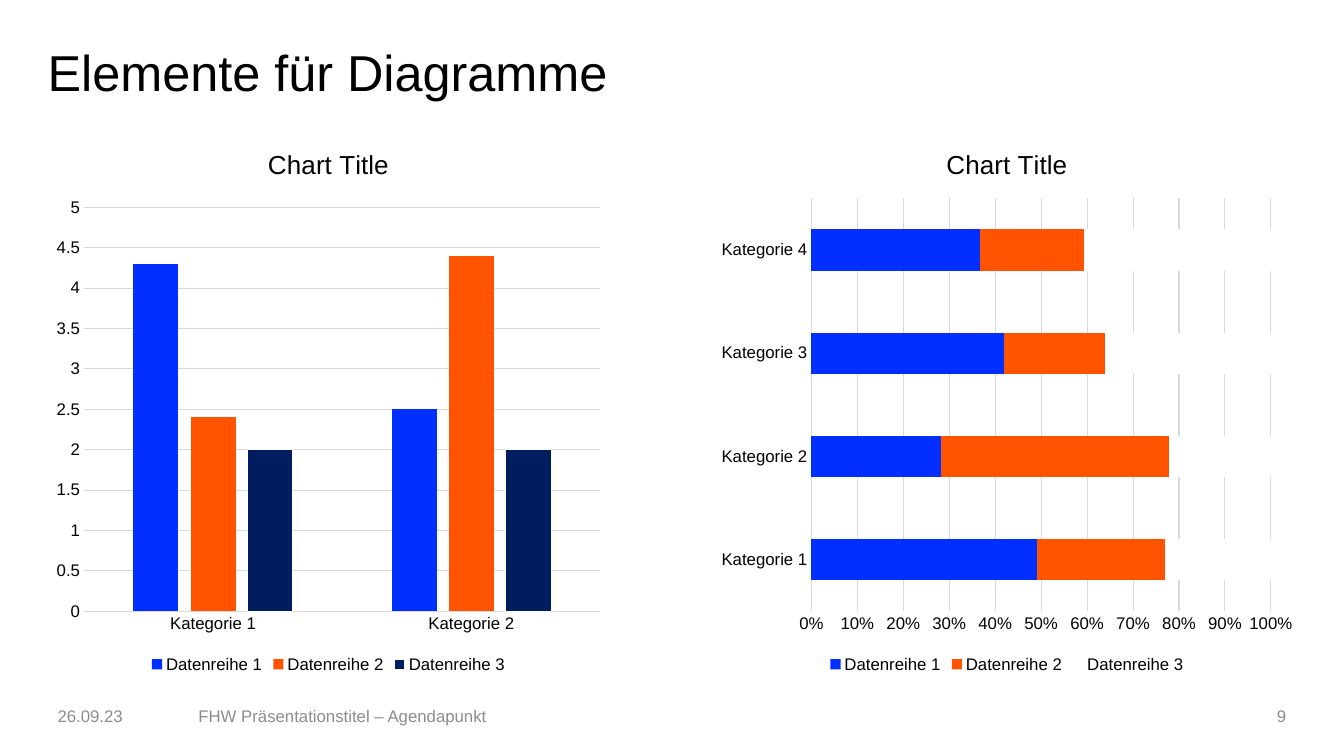
from pptx import Presentation
from pptx import util as u
from pptx.chart import data as chart_data
from pptx.dml import color
from pptx.enum import chart as kinds, text as text_kinds

FONT = "Arial"
COLORS = {
    "text": "000000",
    "footer": "8C8C8C",
    "grid": "D9D9D9",
    "blue": "002FFF",
    "orange": "FF5300",
    "navy": "001D60",
    "white": "FFFFFF",
}


def rgb(name):
    return color.RGBColor.from_string(COLORS[name])


def style_font(font, size, color_name="text"):
    font.name = FONT
    font.size = u.Pt(size)
    font.bold = False
    font.color.rgb = rgb(color_name)


def style_line(line, color_name):
    line.color.rgb = rgb(color_name)
    line.width = u.Pt(0.75)


def add_text(slide, content, box, *, size=12, color_name="text", right=False,
             inset=None, line_spacing=None):
    shape = slide.shapes.add_textbox(*map(u.Pt, box))
    frame = shape.text_frame
    frame.word_wrap = True
    frame.vertical_anchor = text_kinds.MSO_ANCHOR.TOP
    if inset is not None:
        frame.margin_left = frame.margin_right = u.Pt(inset)
        frame.margin_top = frame.margin_bottom = u.Pt(inset)
    paragraph = frame.paragraphs[0]
    paragraph.alignment = text_kinds.PP_ALIGN.RIGHT if right else text_kinds.PP_ALIGN.LEFT
    if line_spacing:
        paragraph.line_spacing = line_spacing
    run = paragraph.add_run()
    run.text = content
    style_font(run.font, size, color_name)


def style_axes(chart, maximum, step, number_format):
    for axis in (chart.category_axis, chart.value_axis):
        axis.major_tick_mark = kinds.XL_TICK_MARK.NONE
        axis.minor_tick_mark = kinds.XL_TICK_MARK.NONE
        style_font(axis.tick_labels.font, 12)
    style_line(chart.category_axis.format.line, "grid")

    values = chart.value_axis
    values.format.line.fill.background()
    values.has_major_gridlines = True
    style_line(values.major_gridlines.format.line, "grid")
    values.minimum_scale = 0
    values.maximum_scale = maximum
    values.major_unit = step
    values.tick_labels.number_format = number_format
    values.tick_labels.number_format_is_linked = False


def add_bars(slide, kind, box, rows, *, fills, gap, overlap, maximum, step,
             number_format="General"):
    # Each row is one series; categories are numbered from 1
    data = chart_data.CategoryChartData()
    data.categories = [f"Kategorie {n}" for n in range(1, len(rows[0]) + 1)]
    for number, row in enumerate(rows, 1):
        data.add_series(f"Datenreihe {number}", row)
    chart = slide.shapes.add_chart(kind, *map(u.Pt, box), data).chart
    style_font(chart.font, 10)

    # Title and legend
    chart.has_title = True
    title_run = chart.chart_title.text_frame.paragraphs[0].add_run()
    title_run.text = "Chart Title"
    style_font(title_run.font, 18.6)
    chart.chart_title.include_in_layout = False
    chart.has_legend = True
    chart.legend.position = kinds.XL_LEGEND_POSITION.BOTTOM
    chart.legend.include_in_layout = False
    style_font(chart.legend.font, 12)

    # Axes and bars
    style_axes(chart, maximum, step, number_format)
    plot = chart.plots[0]
    plot.vary_by_categories = False
    plot.gap_width = gap
    plot.overlap = overlap
    for series, fill in zip(plot.series, fills):
        series.invert_if_negative = False
        series.format.fill.solid()
        series.format.fill.fore_color.rgb = rgb(fill)
        if fill == "navy":
            style_line(series.format.line, "white")
        else:
            series.format.line.fill.background()


def main():
    presentation = Presentation()
    presentation.slide_width = u.Pt(960)
    presentation.slide_height = u.Pt(540)
    slide = presentation.slides.add_slide(presentation.slide_layouts[6])

    # Heading
    add_text(slide, "Elemente für Diagramme", (34, 34, 828, 57),
             size=36, inset=0, line_spacing=0.9)

    # Footer
    footer = [
        ("26.09.23", 34, 84, False),
        ("FHW Präsentationstitel – Agendapunkt", 134.6, 710, False),
        ("9", 863.3, 62.6, True),
    ]
    for content, left, width, right in footer:
        add_text(slide, content, (left, 500.4, width, 28.8),
                 color_name="footer", right=right)

    # Charts
    add_bars(slide, kinds.XL_CHART_TYPE.COLUMN_CLUSTERED, (32.4, 90, 404.6, 393.8),
             [(4.3, 2.5), (2.4, 4.4), (2, 2)],
             fills=("blue", "orange", "navy"), gap=219, overlap=-27,
             maximum=5, step=0.5)
    add_bars(slide, kinds.XL_CHART_TYPE.BAR_STACKED_100, (506.9, 90, 424.8, 393.8),
             [(49, 28, 42, 37), (28, 49, 22, 23), (23, 22, 36, 41)],
             fills=("blue", "orange", "white"), gap=150, overlap=100,
             maximum=1, step=0.1, number_format="0%")

    presentation.save("out.pptx")


if __name__ == "__main__":
    main()
